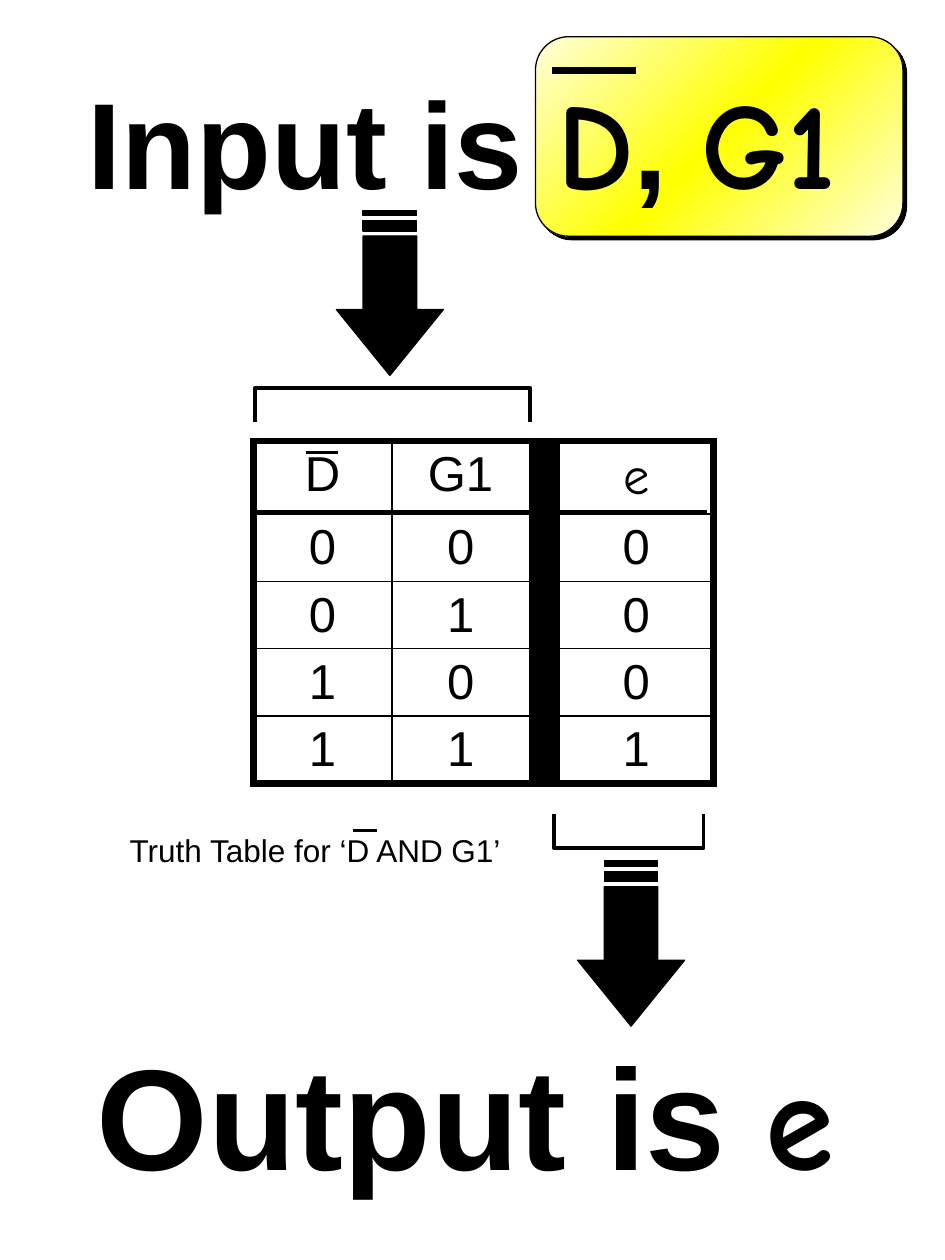
from copy import deepcopy

from lxml.etree import SubElement
from pptx import Presentation
from pptx.dml.color import RGBColor
from pptx.enum.shapes import MSO_CONNECTOR, MSO_SHAPE
from pptx.enum.text import MSO_AUTO_SIZE, PP_ALIGN
from pptx.oxml.ns import qn
from pptx.util import Pt

COLORS = {name: RGBColor.from_string(value) for name, value in {
    "black": "000000", "white": "FFFFFF", "yellow": "FFFF00", "cream": "FFFFDC"}.items()}
SANS, COMIC = "Arial", "Comic Neue"


def style_span(span, font, size, bold=False):
    span.font.name = font
    span.font.size = Pt(size)
    span.font.bold = bold
    span.font.color.rgb = COLORS["black"]


def draw_outline(contours, weight, filled):
    builder = None
    for contour in contours:
        points = [(Pt(x), Pt(y)) for x, y in contour]
        if builder is None:
            builder = page.shapes.build_freeform(*points[0], scale=1)
        else:
            builder.move_to(*points[0])
        builder.add_line_segments(points[1:], close=filled)
    outline = builder.convert_to_shape()
    outline.shadow.inherit = False
    if filled:
        outline.fill.solid()
        outline.fill.fore_color.rgb = COLORS["black"]
    else:
        outline.fill.background()
    outline.line.color.rgb = COLORS["black"]
    outline.line.width = Pt(weight)


deck = Presentation()
deck.slide_width, deck.slide_height = Pt(540), Pt(720)
page = deck.slides.add_slide(deck.slide_layouts[6])

# Yellow card behind the input names
card = page.shapes.add_shape(MSO_SHAPE.ROUNDED_RECTANGLE, Pt(306), Pt(21), Pt(210), Pt(114))
card.adjustments[0] = 0.167
card.line.color.rgb = COLORS["black"]
card.line.width = Pt(0.75)
card.fill.gradient()
card.fill.gradient_angle = 315
first_stop = card.fill._fill._gradFill.find(qn("a:gsLst"))[0]
first_stop.addnext(deepcopy(first_stop))
for stop, position, name in zip(card.fill.gradient_stops, (0, 0.5, 1),
                                ("cream", "yellow", "cream")):
    stop.position = position
    stop.color.rgb = COLORS[name]
card.shadow.inherit = False
effects = card._element.spPr.find(qn("a:effectLst"))
shadow = SubElement(effects, qn("a:outerShdw"), dist=str(Pt(2.8)), dir="2700000",
                    algn="ctr", rotWithShape="0")
SubElement(shadow, qn("a:srgbClr"), val=str(COLORS["black"]))

# Truth table
ROWS = [("D", "G1", "", "e"), ("0", "0", "", "0"), ("0", "1", "", "0"),
        ("1", "0", "", "0"), ("1", "1", "", "1")]
WIDTHS = (79.2, 78.6, 16.6, 87.8)
ROW_HEIGHT = 37.44
last_row, last_column = len(ROWS) - 1, len(WIDTHS) - 1
table = page.shapes.add_table(len(ROWS), len(WIDTHS), Pt(144.7), Pt(252),
                              Pt(sum(WIDTHS)), Pt(ROW_HEIGHT * len(ROWS))).table
table.first_row = table.horz_banding = False
for column, width in zip(table.columns, WIDTHS):
    column.width = Pt(width)
for r, words in enumerate(ROWS):
    table.rows[r].height = Pt(ROW_HEIGHT)
    for c, word in enumerate(words):
        cell = table.cell(r, c)
        outer_sides = {"lnL": c == 0, "lnR": c == last_column,
                       "lnT": r == 0, "lnB": r == last_row}
        for side, is_outer in outer_sides.items():
            border = SubElement(cell._tc.get_or_add_tcPr(), qn("a:" + side),
                                w=str(Pt(4.5 if is_outer else 1)))
            paint = SubElement(border, qn("a:solidFill"))
            SubElement(paint, qn("a:srgbClr"), val=str(COLORS["black"]))
        cell.fill.solid()
        cell.fill.fore_color.rgb = COLORS["white" if word else "black"]
        if word:
            para = cell.text_frame.paragraphs[0]
            para.text = word
            para.alignment = PP_ALIGN.CENTER
            para.space_before = Pt(5.6)
            font, size = (COMIC, 30) if word == "e" else (SANS, 28)
            style_span(para.runs[0], font, size)

# Caption and headings
TEXTS = [
    (67, 471.6, 230.4, 28.8, False, [("Truth Table for ‘D AND G1’", SANS, 18)]),
    (43.2, 34.6, 463, 91.4, True, [("Input is ", SANS, 70), ("D", COMIC, 70),
                                   (", ", SANS, 70), ("G1", COMIC, 70)]),
    (48.2, 583.2, 442, 105.8, True, [("Output is ", SANS, 82), ("e", COMIC, 80)]),
]
for left, top, width, height, bold, pieces in TEXTS:
    box = page.shapes.add_textbox(Pt(left), Pt(top), Pt(width), Pt(height))
    box.text_frame.word_wrap = False
    box.text_frame.auto_size = MSO_AUTO_SIZE.SHAPE_TO_FIT_TEXT
    para = box.text_frame.paragraphs[0]
    for words, font, size in pieces:
        span = para.add_run()
        span.text = words
        style_span(span, font, size, bold)

# Striped arrows pointing down
HEAD, SHAFT = 30.6, 15.3
for x, y in ((222.8, 120.2), (360.6, 492)):
    left, right = x - SHAFT, x + SHAFT
    neck, tip = y + 56.7, y + 94.4
    body = [(right, neck), (right, y + 14.7), (left, y + 14.7), (left, neck),
            (x - HEAD, neck), (x, tip), (x + HEAD, neck)]
    stripes = [[(right, y + a), (left, y + a), (left, y + b), (right, y + b)]
               for a, b in ((5.9, 11.8), (0, 2.9))]
    draw_outline([body] + stripes, 0.75, True)

# Brackets: inputs above the table, output below it
for left, right, tips, bar in ((145.6, 303.1, 241.2, 221.8), (316.6, 402, 465.1, 484.6)):
    draw_outline([[(left, tips), (left, bar), (right, bar), (right, tips)]], 2.25, False)

# Header rule and the bars over each D
for left, right, y, weight in ((144.7, 403.9, 293, 3), (315.4, 363.6, 40.3, 4.5),
                               (175, 193, 258.5, 1.5), (201.6, 215.3, 474.5, 1.5)):
    rule = page.shapes.add_connector(MSO_CONNECTOR.STRAIGHT, Pt(left), Pt(y), Pt(right), Pt(y))
    rule.line.color.rgb = COLORS["black"]
    rule.line.width = Pt(weight)
    SubElement(rule._element.spPr, qn("a:effectLst"))

deck.save("out.pptx")
